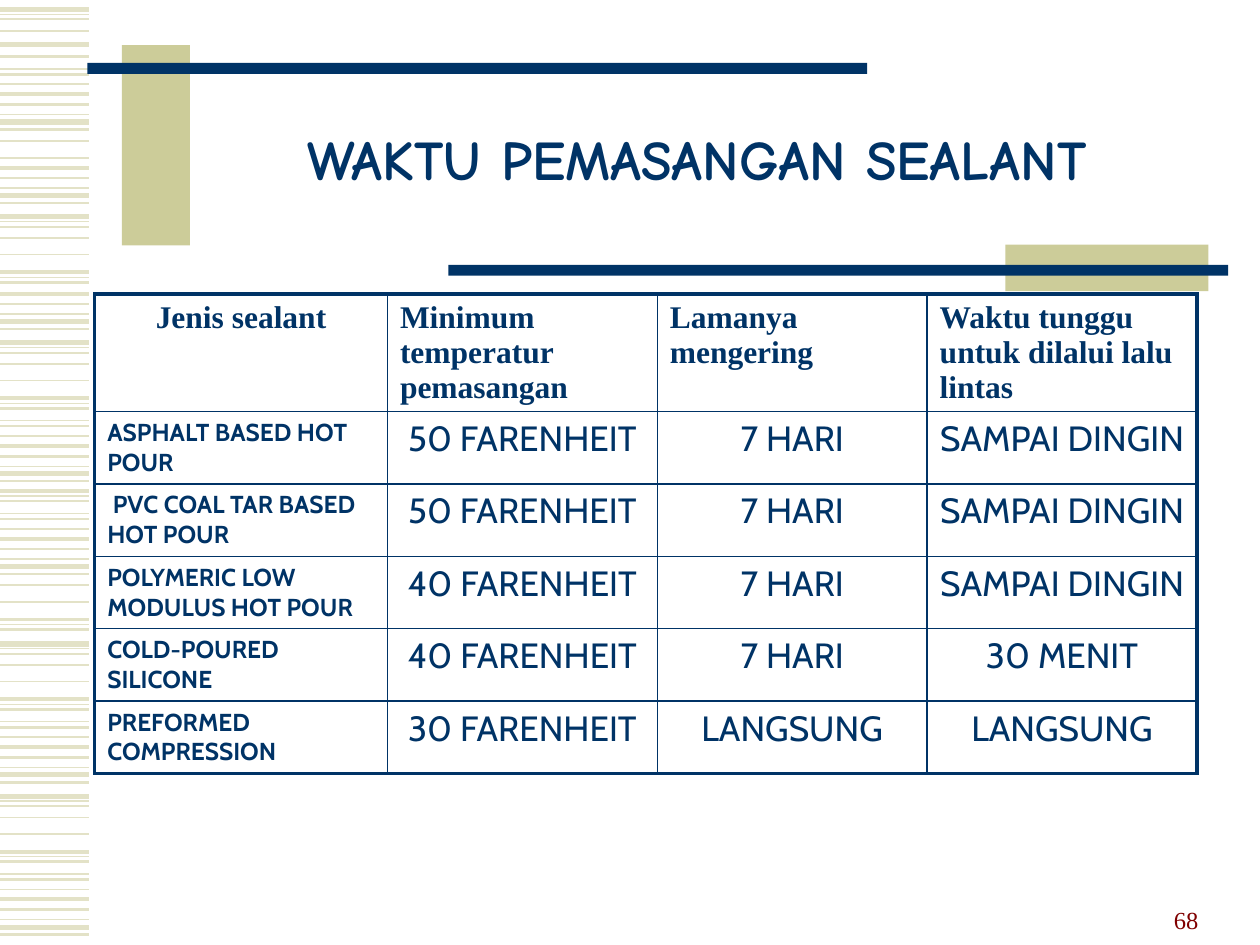
from lxml.etree import SubElement
from pptx import Presentation
from pptx.dml.color import RGBColor
from pptx.enum.shapes import MSO_CONNECTOR, MSO_SHAPE
from pptx.enum.text import MSO_ANCHOR, PP_ALIGN
from pptx.oxml.ns import qn
from pptx.util import Cm, Pt

COLORS = {"navy": "003366", "khaki": "CCCC99", "stripe": "E3E2C7", "maroon": "800000"}


def format_text(paragraph, font_name, size, color, bold, alignment):
    paragraph.alignment = alignment
    for run in paragraph.runs:
        run.font.name = font_name
        run.font.size = Pt(size)
        run.font.bold = bold
        run.font.color.rgb = RGBColor.from_string(COLORS[color])


def set_border(cell, side, width):
    line = SubElement(cell._tc.get_or_add_tcPr(), qn(f"a:{side}"), w=str(Pt(width)))
    fill = SubElement(line, qn("a:solidFill"))
    SubElement(fill, qn("a:srgbClr"), val=COLORS["navy"])


presentation = Presentation()
presentation.slide_width, presentation.slide_height = Cm(25.4), Cm(19.05)
slide = presentation.slides.add_slide(presentation.slide_layouts[5])

# Striped left edge: one pattern of (offset, weight), repeated whole or in part
stripes = [
    (0, 3), (0.1, 0.75), (0.2, 1), (0.43, 1), (0.76, 1), (1.12, 2.25),
    (1.22, 0.75), (1.32, 1.5), (1.57, 0.75), (1.68, 1.5), (1.88, 1), (2.08, 2.25),
    (2.29, 1.5), (2.49, 0.75), (2.64, 3), (2.79, 1.5),
]
# Top of the pattern, first stripe, end stripe
bands = [
    (0.19, 0, 4), (-1.75, 14, 15), (-0.18, 7, 16), (2.08, 4, 5),
    (1.3, 10, 16), (4.37, 0, 8), (3.84, 11, 16), (6.91, 0, 16),
    (8.78, 5, 16), (11.37, 3, 8), (12.98, 0, 16), (16.05, 0, 16),
]
for top, first, end in bands:
    for offset, weight in stripes[first:end]:
        y = Cm(top + offset)
        stripe = slide.shapes.add_connector(MSO_CONNECTOR.STRAIGHT, 0, y, Cm(1.8), y)
        stripe.line.color.rgb = RGBColor.from_string(COLORS["stripe"])
        stripe.line.width = Pt(weight)
        SubElement(stripe._element.spPr, qn("a:effectLst"))

# Khaki blocks and navy bars around the title
for color, left, top, width, height in [
    ("khaki", 2.46, 0.91, 1.37, 4.04),
    ("navy", 1.76, 1.27, 15.72, 0.22),
    ("khaki", 20.27, 4.93, 4.09, 0.94),
    ("navy", 9.04, 5.34, 15.72, 0.22),
]:
    shape = slide.shapes.add_shape(
        MSO_SHAPE.RECTANGLE, Cm(left), Cm(top), Cm(width), Cm(height))
    shape.shadow.inherit = False
    shape.fill.solid()
    shape.fill.fore_color.rgb = RGBColor.from_string(COLORS[color])
    shape.line.fill.background()

# Title
title = slide.shapes.title
title.left, title.top, title.width, title.height = Cm(3.81), Cm(1.7), Cm(20.5), Cm(3.18)
title.text_frame.text = "WAKTU PEMASANGAN SEALANT"
title.text_frame.vertical_anchor = MSO_ANCHOR.MIDDLE
title.text_frame.paragraphs[0].line_spacing = 0.85
format_text(title.text_frame.paragraphs[0], "Comic Neue", 32, "navy", True, PP_ALIGN.CENTER)

# Sealant table
rows = [
    ("Jenis sealant", "Minimum temperatur pemasangan", "Lamanya mengering",
     "Waktu tunggu untuk dilalui lalu lintas"),
    ("ASPHALT BASED HOT POUR", "50 FARENHEIT", "7 HARI", "SAMPAI DINGIN"),
    (" PVC COAL TAR BASED HOT POUR", "50 FARENHEIT", "7 HARI", "SAMPAI DINGIN"),
    ("POLYMERIC LOW MODULUS HOT POUR", "40 FARENHEIT", "7 HARI", "SAMPAI DINGIN"),
    ("COLD-POURED SILICONE", "40 FARENHEIT", "7 HARI", "30 MENIT"),
    ("PREFORMED COMPRESSION", "30 FARENHEIT", "LANGSUNG", "LANGSUNG"),
]
column_widths = [5.9, 5.44, 5.44, 5.44]
row_heights = [2.36] + [1.46] * 5
last_row, last_column = len(rows) - 1, len(column_widths) - 1
table = slide.shapes.add_table(
    len(rows), len(column_widths), Cm(1.91), Cm(5.93),
    Cm(sum(column_widths)), Cm(sum(row_heights))).table
table.first_row = table.horz_banding = False
for column, width in zip(table.columns, column_widths):
    column.width = Cm(width)
for row, height in zip(table.rows, row_heights):
    row.height = Cm(height)

for i, row_texts in enumerate(rows):
    for j, text in enumerate(row_texts):
        cell = table.cell(i, j)
        cell.text_frame.text = text
        if i == 0:
            style = ("Times New Roman", 18, "navy", True)
        elif j == 0:
            style = ("Cabin", 14, "navy", True)
        else:
            style = ("Cabin", 20, "navy", False)
        centered = (i == 0) == (j == 0)
        format_text(cell.text_frame.paragraphs[0], *style,
                    PP_ALIGN.CENTER if centered else PP_ALIGN.LEFT)
        # Thick lines on the outer frame, thin ones inside
        for side, is_outer in [("lnL", j == 0), ("lnR", j == last_column),
                               ("lnT", i == 0), ("lnB", i == last_row)]:
            set_border(cell, side, 2.25 if is_outer else 1)
        cell.fill.background()

# Slide number
number = slide.shapes.add_textbox(Cm(18.31), Cm(17.7), Cm(6.1), Cm(1.27))
number.text_frame.word_wrap = True
number.text_frame.vertical_anchor = MSO_ANCHOR.BOTTOM
number.text_frame.text = "68"
format_text(number.text_frame.paragraphs[0], "Times New Roman", 14, "maroon", False,
            PP_ALIGN.RIGHT)

presentation.save("out.pptx")
